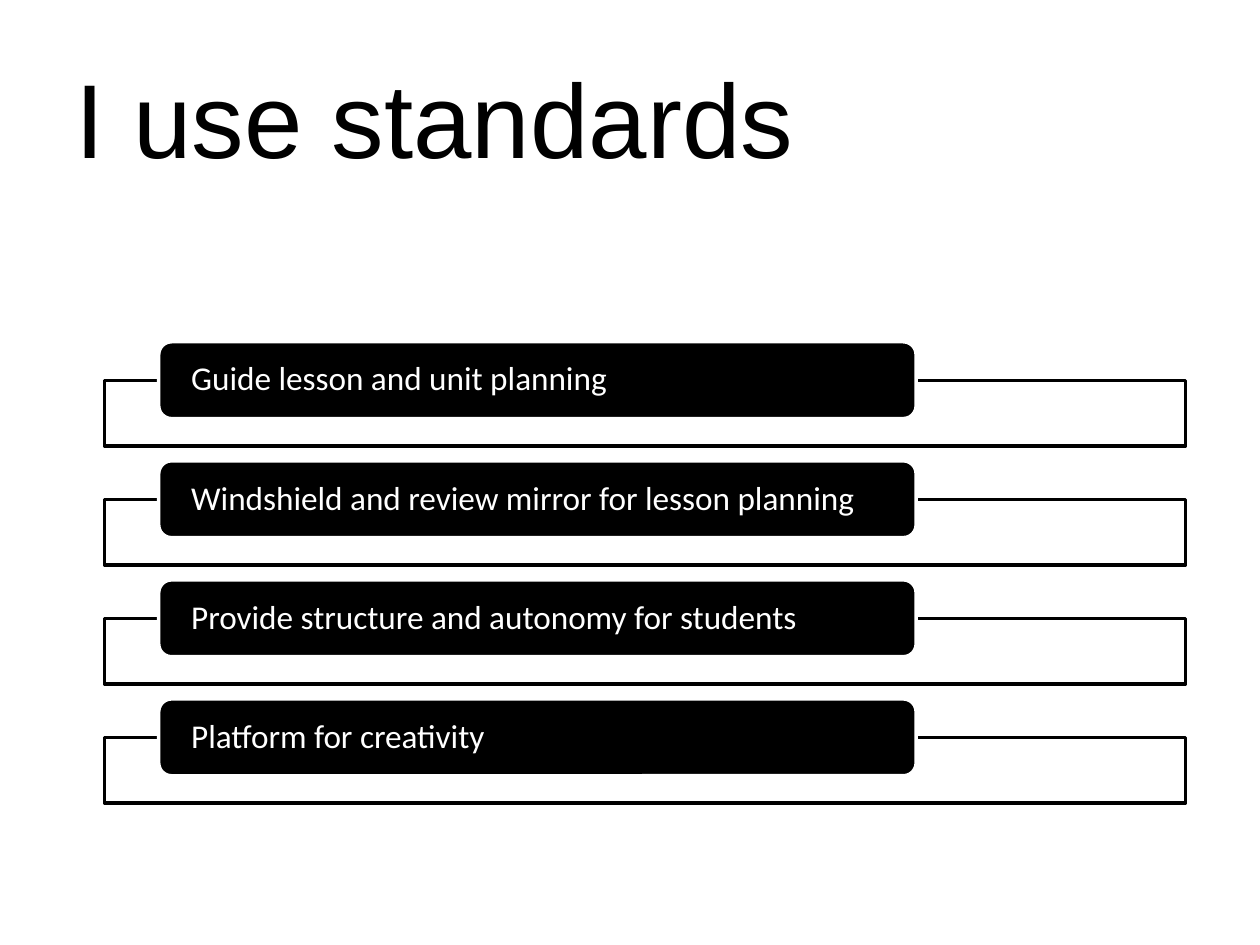
from lxml import etree
from pptx import Presentation
from pptx.dml.color import RGBColor
from pptx.enum.shapes import MSO_SHAPE
from pptx.enum.text import MSO_ANCHOR, PP_ALIGN
from pptx.oxml.ns import qn
from pptx.util import Cm, Pt

RECTANGLE = MSO_SHAPE.RECTANGLE
ROUNDED = MSO_SHAPE.ROUNDED_RECTANGLE
MIDDLE = MSO_ANCHOR.MIDDLE
LEFT = PP_ALIGN.LEFT

COLORS = {"ink": "000000", "paper": "FFFFFF"}
STANDARDS = [
    "Guide lesson and unit planning",
    "Windshield and review mirror for lesson planning",
    "Provide structure and autonomy for students",
    "Platform for creativity",
]
FIRST_LABEL_TOP = 6.89
ROW_PITCH = 2.4
FRAME_DROP = 0.78


def color(name):
    """Return the RGB colour with the given palette name."""
    return RGBColor.from_string(COLORS[name])


def write_text(shape, text, *, font, size, ink, inset, inset_y=0, line_spacing=1.0):
    """Write one left-aligned, vertically centred paragraph into a shape."""
    frame = shape.text_frame
    frame.word_wrap = True
    frame.vertical_anchor = MIDDLE
    frame.margin_left = frame.margin_right = Cm(inset)
    frame.margin_top = frame.margin_bottom = Cm(inset_y)
    paragraph = frame.paragraphs[0]
    paragraph.alignment = LEFT
    paragraph.line_spacing = line_spacing
    run = paragraph.add_run()
    run.text = text
    run.font.name = font
    run.font.size = Pt(size)
    run.font.color.rgb = color(ink)


class StandardsSlide:
    """Hold the style and the current slide."""

    title_font = "Arial"
    label_font = "Calibri"
    line_width = Pt(2)

    def __init__(self, slide):
        """Keep the slide to draw on."""
        self.slide = slide

    def title(self, text):
        """Add the slide title."""
        box = self.slide.shapes.add_textbox(Cm(1.27), Cm(0.76), Cm(22.86), Cm(3.18))
        write_text(box, text, font=self.title_font, size=60, ink="ink",
                   inset=0.25, inset_y=0.13)

    def panel(self, kind, left, top, width, height, fill, line):
        """Add a filled and outlined preset shape."""
        shape = self.slide.shapes.add_shape(
            kind, Cm(left), Cm(top), Cm(width), Cm(height))
        shape.shadow.inherit = False
        shape.fill.solid()
        shape.fill.fore_color.rgb = color(fill)
        shape.line.color.rgb = color(line)
        shape.line.width = self.line_width
        return shape

    def frame(self, top):
        """Add the slightly transparent frame behind a label."""
        shape = self.panel(RECTANGLE, 2.11, top, 21.79, 1.32, "paper", "ink")
        fill_color = shape.fill._xPr.find(qn("a:solidFill"))[0]
        etree.SubElement(fill_color, qn("a:alpha")).set("val", "90000")

    def label(self, text, top):
        """Add a rounded label with its text."""
        shape = self.panel(ROUNDED, 3.2, top, 15.27, 1.55, "ink", "paper")
        write_text(shape, text, font=self.label_font, size=19, ink="paper",
                   inset=0.58, line_spacing=0.9)


def main():
    """Build and save the presentation."""
    presentation = Presentation()
    presentation.slide_width = Cm(25.4)
    presentation.slide_height = Cm(19.05)
    page = StandardsSlide(presentation.slides.add_slide(presentation.slide_layouts[6]))
    page.title("I use standards")
    for row, text in enumerate(STANDARDS):
        top = FIRST_LABEL_TOP + row * ROW_PITCH
        page.frame(top + FRAME_DROP)
        page.label(text, top)
    presentation.save("out.pptx")


if __name__ == "__main__":
    main()
